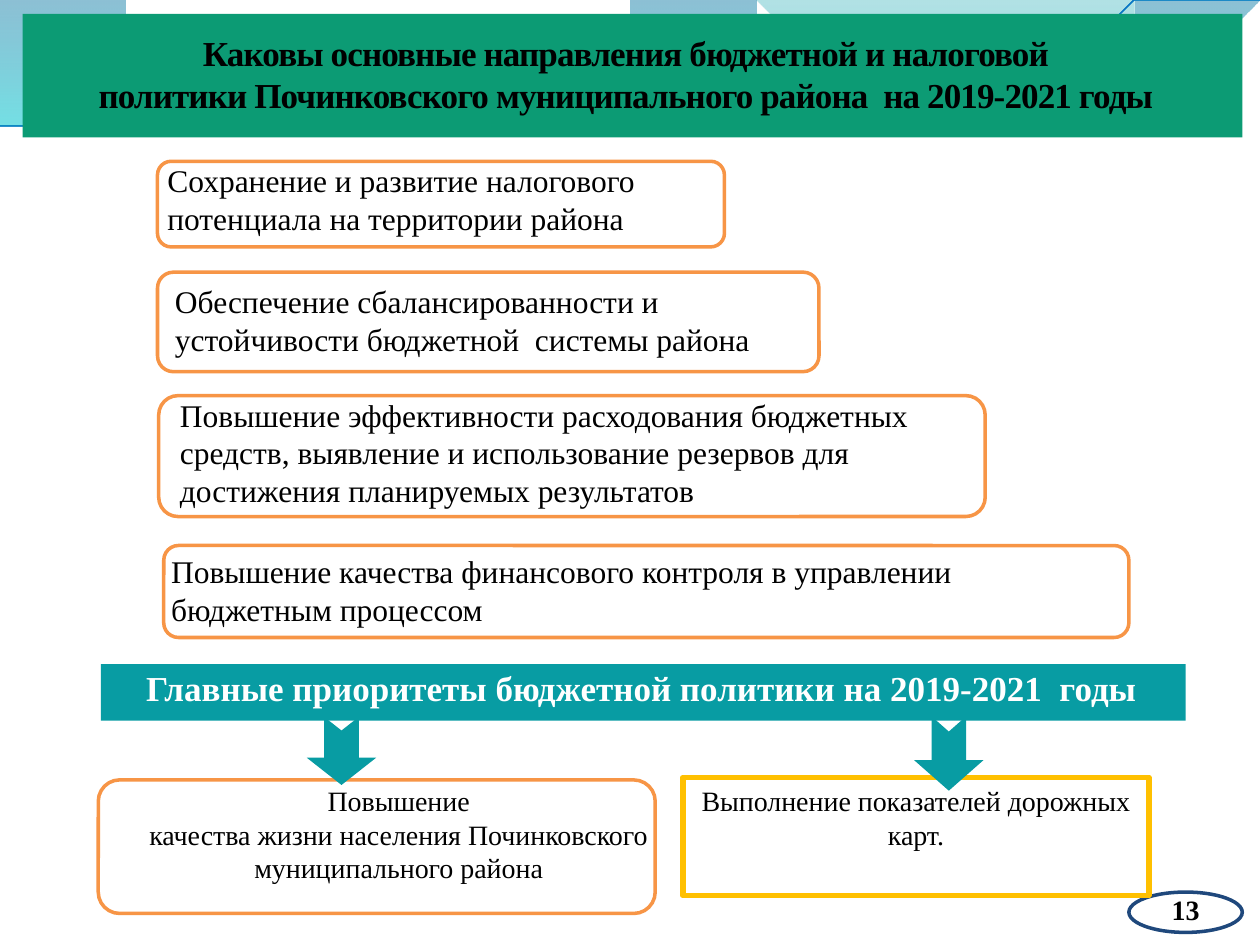
from lxml import etree
from pptx import Presentation
from pptx.dml.color import RGBColor
from pptx.enum.shapes import MSO_SHAPE
from pptx.enum.text import MSO_ANCHOR, MSO_AUTO_SIZE, PP_ALIGN
from pptx.oxml.ns import qn
from pptx.util import Inches, Pt

FONT = "Times New Roman"
BLACK = RGBColor(0x00, 0x00, 0x00)
WHITE = RGBColor(0xFF, 0xFF, 0xFF)
GREEN = RGBColor(0x0C, 0x9B, 0x74)
TEAL = RGBColor(0x08, 0x9C, 0xA3)
ORANGE = RGBColor(0xF7, 0x95, 0x46)
AMBER = RGBColor(0xFF, 0xC0, 0x00)
NAVY = RGBColor(0x1F, 0x48, 0x7C)
DEEP_BLUE = RGBColor(0x00, 0x74, 0xA1)
CYAN = RGBColor(0x00, 0xC6, 0xCF)
SEA = RGBColor(0x00, 0xA1, 0xA9)
SKY = RGBColor(0x00, 0x8B, 0xBF)
AQUA_LINE = RGBColor(0x0A, 0xB8, 0xBF)
BLUE_LINE = RGBColor(0x0F, 0x6F, 0xC6)

GOALS = [
    ((1.25, 1.28, 4.5, 0.68), (-0.02, -0.05, 5, 0.71),
     "Сохранение и развитие налогового потенциала на территории района"),
    ((1.25, 2.16, 5.25, 0.79), (0.04, 0.03, 5.29, 0.71),
     "Обеспечение сбалансированности и устойчивости бюджетной  системы района"),
    ((1.26, 3.14, 6.56, 0.96), (0.07, -0.05, 6.42, 1),
     "Повышение эффективности расходования бюджетных средств, выявление "
     "и использование резервов для достижения планируемых результатов"),
    ((1.3, 4.33, 7.66, 0.73), (-0.04, 0, 7.57, 0.71),
     "Повышение качества финансового контроля в управлении бюджетным процессом"),
]


def to_emu(box):
    return [Inches(length) for length in box]


def paint(shape, fill=None, line=None, width=0):
    shape.shadow.inherit = False
    if fill is None:
        shape.fill.background()
    else:
        shape.fill.solid()
        shape.fill.fore_color.rgb = fill
    if line is None:
        shape.line.fill.background()
    else:
        shape.line.color.rgb = line
        shape.line.width = Pt(width)
    return shape


def add_figure(slide, kind, box, **paints):
    return paint(slide.shapes.add_shape(kind, *to_emu(box)), **paints)


def write(shape, lines, size, color=BLACK, bold=False, align=PP_ALIGN.LEFT,
          anchor=MSO_ANCHOR.TOP, margins=(0.1, 0.05, 0.1, 0.05)):
    frame = shape.text_frame
    frame.word_wrap = True
    frame.auto_size = MSO_AUTO_SIZE.NONE
    frame.vertical_anchor = anchor
    (frame.margin_left, frame.margin_top,
     frame.margin_right, frame.margin_bottom) = to_emu(margins)
    frame.text = "\n".join(lines)
    for paragraph in frame.paragraphs:
        paragraph.alignment = align
        font = paragraph.font
        font.name, font.size, font.bold = FONT, Pt(size), bold
        font.color.rgb = color


def curve_points(start, end_a, end_b, end, steps=16):
    for step in range(1, steps + 1):
        t = step / steps
        weights = ((1 - t) ** 3, 3 * t * (1 - t) ** 2, 3 * t * t * (1 - t), t ** 3)
        yield tuple(sum(weight * point[axis] for weight, point
                        in zip(weights, (start, end_a, end_b, end)))
                    for axis in (0, 1))


def add_wave(slide, start, segments, close):
    points = [start]
    for segment in segments:
        if len(segment) == 1:
            points.append(segment[0])
        else:
            points.extend(curve_points(points[-1], *segment))
    builder = slide.shapes.build_freeform(*points[0], scale=Inches(1))
    builder.add_line_segments(points[1:], close=close)
    return builder.convert_to_shape()


def fill_wave(shape, stops):
    paint(shape)
    shape.fill.gradient()
    shape.fill.gradient_angle = 270
    for stop, (position, color, opacity) in zip(shape.fill.gradient_stops, stops):
        stop.position = position
        stop.color.rgb = color
    for color_node, (_, _, opacity) in zip(
            shape._element.spPr.iter(qn("a:srgbClr")), stops):
        etree.SubElement(color_node, qn("a:alpha"), val=str(opacity * 1000))


def add_waves(slide):
    left_wave = add_wave(slide, (0, 0), [
        [(4.4, -0.01)],
        [(4.76, 0.17), (6.64, 0.63), (7.58, 0.63)],
        [(8.53, 0.63), (9.58, 0.26), (10, 0.09)],
        [(10.01, 0.36)],
        [(9.83, 0.44), (8.7, 0.76), (7.46, 0.75)],
        [(6.22, 0.75), (3.82, 0.28), (2.57, 0.34)],
        [(1.29, 0.36), (0.46, 0.83), (-0.01, 1.13)]], True)
    fill_wave(left_wave, [(0, DEEP_BLUE, 45), (1, CYAN, 55)])
    right_wave = add_wave(slide, (4.79, -0.01), [
        [(5.09, 0.11), (6.82, 0.62), (7.69, 0.65)],
        [(8.56, 0.69), (9.61, 0.32), (10, 0.21)],
        [(10, 0)]], True)
    fill_wave(right_wave, [(0, SEA, 30), (0.8, SKY, 45)])
    aqua = add_wave(slide, (0, 1.11), [
        [(0.48, 0.93), (1.58, 0.57), (2.77, 0.52)],
        [(3.95, 0.47), (5.93, 0.89), (7.13, 0.8)],
        [(8.33, 0.71), (9.38, 0.15), (9.98, -0.02)]], False)
    paint(aqua, line=AQUA_LINE, width=0.85)
    blue = add_wave(slide, (0, 1.04), [
        [(0.47, 0.96), (1.64, 0.61), (2.83, 0.56)],
        [(4.03, 0.51), (5.97, 0.84), (7.17, 0.75)],
        [(8.36, 0.67), (9.41, 0.21), (10, 0.06)]], False)
    paint(blue, line=BLUE_LINE, width=0.75)


def add_banner(slide, box):
    left, top, _, _ = box
    add_figure(slide, MSO_SHAPE.RECTANGLE, box, fill=GREEN)
    title = slide.shapes.title
    title.left, title.top, title.width, title.height = to_emu(
        (left - 0.67, top + 0.14, 10.91, 0.67))
    write(title, ["Каковы основные направления бюджетной и налоговой\v"
                  "политики Починковского муниципального района  на 2019-2021 годы"],
          20, bold=True, align=PP_ALIGN.CENTER, anchor=MSO_ANCHOR.BOTTOM,
          margins=(0, 0, 0, 0))
    for run in title.text_frame.paragraphs[0].runs:
        run.font._element.set("spc", "-50")
    slide.shapes._spTree.append(title._element)


def add_rounded_text(slide, box, text_box, lines, size, align=PP_ALIGN.LEFT):
    outline = add_figure(slide, MSO_SHAPE.ROUNDED_RECTANGLE, box, line=ORANGE, width=2)
    outline.adjustments[0] = 0.16
    left, top, width, height = text_box
    text = slide.shapes.add_textbox(
        *to_emu((box[0] + left, box[1] + top, width, height)))
    write(text, lines, size, align=align)


def add_page_number(slide, box):
    oval = add_figure(slide, MSO_SHAPE.OVAL, box, fill=WHITE, line=NAVY, width=2)
    write(oval, ["13"], 16, bold=True, align=PP_ALIGN.CENTER,
          anchor=MSO_ANCHOR.MIDDLE, margins=(0, 0, 0, 0.05))


def add_down_arrow(slide, center_x, center_y, length, head):
    breadth = 0.55
    arrow = add_figure(
        slide, MSO_SHAPE.NOTCHED_RIGHT_ARROW,
        (center_x - length / 2, center_y - breadth / 2, length, breadth), fill=TEAL)
    arrow.rotation = 90
    arrow.adjustments[1] = head


def add_priorities(slide, box):
    left, top, _, _ = box
    header = add_figure(slide, MSO_SHAPE.RECTANGLE, box, fill=TEAL)
    write(header, ["Главные приоритеты бюджетной политики на 2019-2021  годы"],
          20, color=WHITE, bold=True, margins=(0.36, 0.02, 0, 0))
    add_rounded_text(slide, (left - 0.02, top + 0.92, 4.42, 1.06),
                     (0.3, -0.02, 4.17, 1.21),
                     ["Повышение",
                      "качества жизни населения Починковского муниципального района"],
                     16, PP_ALIGN.CENTER)
    roadmap = add_figure(slide, MSO_SHAPE.RECTANGLE,
                         (left + 4.62, top + 0.9, 3.7, 0.94), line=AMBER, width=3)
    write(roadmap, ["Выполнение показателей дорожных", "карт."], 16,
          align=PP_ALIGN.CENTER)
    add_down_arrow(slide, left + 1.91, top + 0.69, 0.54, 0.4)
    add_down_arrow(slide, left + 6.73, top + 0.71, 0.59, 0.44)


def main():
    presentation = Presentation()
    presentation.slide_width, presentation.slide_height = Inches(10), Inches(7.5)
    slide = presentation.slides.add_slide(presentation.slide_layouts[5])
    add_waves(slide)
    add_banner(slide, (0.18, 0.11, 9.68, 0.98))
    for box, text_box, text in GOALS:
        add_rounded_text(slide, box, text_box, [text], 18)
    add_page_number(slide, (8.96, 7.08, 0.9, 0.32))
    add_priorities(slide, (0.8, 5.27, 8.61, 0.45))
    presentation.save("out.pptx")


if __name__ == "__main__":
    main()
